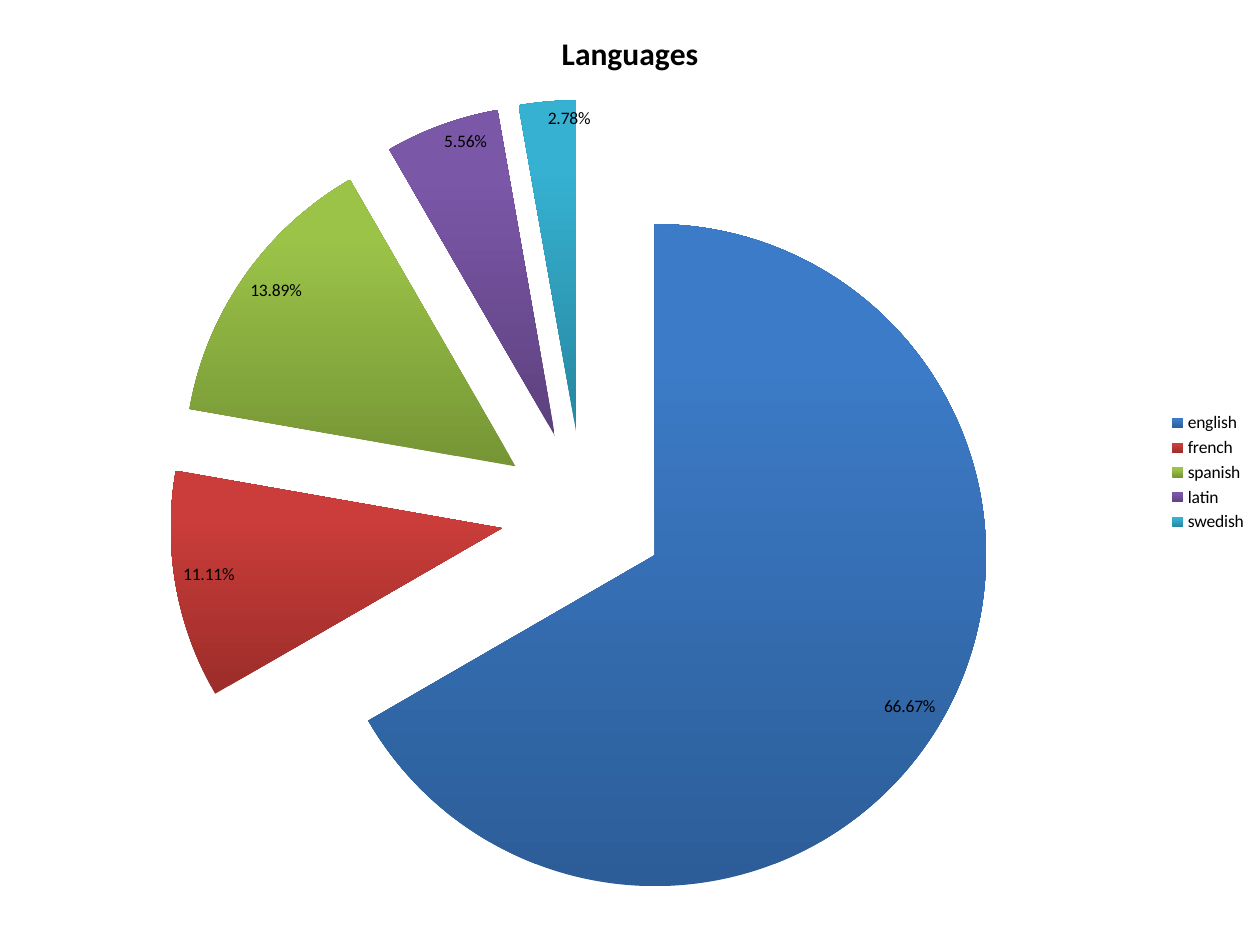
from pptx import Presentation
from pptx.chart.data import CategoryChartData
from pptx.dml.color import RGBColor
from pptx.enum.chart import XL_CHART_TYPE as ChartType
from pptx.enum.chart import XL_LABEL_POSITION as LabelPos
from pptx.enum.chart import XL_LEGEND_POSITION as LegendPos
from pptx.oxml import parse_xml
from pptx.oxml.ns import nsdecls
from pptx.util import Inches, Pt

# Language, share, dark lower colour, bright upper colour
LANGUAGES = [
    ("english", 0.6667, "2C5D98", "3C7BC7"),
    ("french", 0.1111, "9B2D2A", "CB3D3A"),
    ("spanish", 0.1389, "769535", "9BC348"),
    ("latin", 0.0556, "5D417E", "7B57A8"),
    ("swedish", 0.0278, "2787A0", "36B1D2"),
]


def color(hex_value):
    return RGBColor.from_string(hex_value)


def style_font(font, size, bold=False):
    font.name = "Calibri"
    font.size = Pt(size)
    font.bold = bold
    font.color.rgb = color("000000")


def fill_slice(fill, dark, bright):
    fill.gradient()
    fill.gradient_angle = 90
    lower, upper = fill.gradient_stops
    lower.color.rgb = color(dark)
    upper.color.rgb = color(bright)
    upper.position = 0.8


def explode(series, percent):
    explosion = parse_xml(f'<c:explosion {nsdecls("c")} val="{percent}"/>')
    series._element.find("c:dPt", series._element.nsmap).addprevious(explosion)


def add_language_pie(slide, left, top, width, height):
    shares = CategoryChartData(number_format="0.00%")
    shares.categories = [language for language, *_ in LANGUAGES]
    shares.add_series("Languages", [share for _, share, *_ in LANGUAGES])
    chart = slide.shapes.add_chart(
        ChartType.PIE, left, top, width, height, shares).chart
    style_font(chart.font, 10)

    # Title
    chart.has_title = True
    heading = chart.chart_title.text_frame
    heading.text = "Languages"
    style_font(heading.paragraphs[0].runs[0].font, 18, bold=True)
    chart.chart_title.include_in_layout = False

    # Legend
    chart.has_legend = True
    chart.legend.position = LegendPos.RIGHT
    chart.legend.include_in_layout = False

    # Slices
    pie = chart.plots[0]
    pie.vary_by_categories = True
    series = pie.series[0]
    for index, (_, _, dark, bright) in enumerate(LANGUAGES):
        fill_slice(series.points[index].format.fill, dark, bright)
    explode(series, 25)

    # Share labels
    labels = series.data_labels
    labels.show_value = True
    labels.show_percentage = False
    labels.number_format = "0.00%"
    labels.number_format_is_linked = False
    labels.position = LabelPos.INSIDE_END
    style_font(labels.font, 10)


def main():
    deck = Presentation()
    deck.slide_width, deck.slide_height = Inches(10), Inches(7.5)
    slide = deck.slides.add_slide(deck.slide_layouts[6])
    add_language_pie(slide, 0, 0, Inches(10), Inches(7.5))
    deck.save("out.pptx")


if __name__ == "__main__":
    main()
